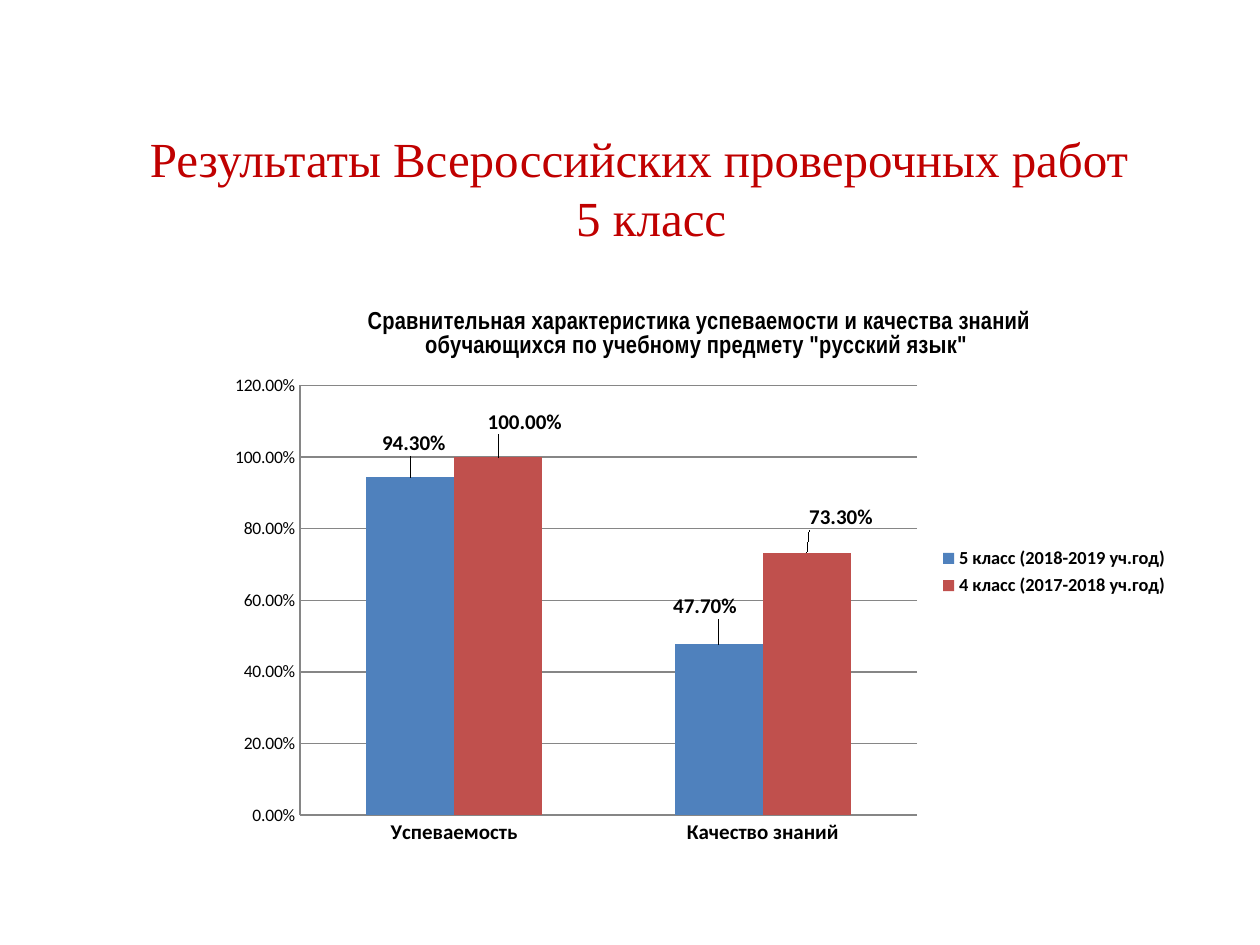
from lxml.etree import SubElement
from pptx import Presentation
from pptx.chart.data import CategoryChartData
from pptx.dml.color import RGBColor
from pptx.enum.chart import XL_CHART_TYPE, XL_LABEL_POSITION, XL_LEGEND_POSITION, XL_TICK_MARK
from pptx.enum.text import MSO_ANCHOR, PP_ALIGN
from pptx.oxml import parse_xml
from pptx.oxml.ns import nsdecls, qn
from pptx.util import Inches, Pt

DARK_RED = RGBColor(0xC0, 0x00, 0x00)
BLACK = RGBColor(0x00, 0x00, 0x00)
GRID_GRAY = RGBColor(0x86, 0x86, 0x86)
BLUE = RGBColor(0x4F, 0x81, 0xBD)
RED = RGBColor(0xC0, 0x50, 0x4D)

CHART_BOX = (1.72, 2.27, 7.66, 4.54)
PLOT_BOX = (0.66, 0.79, 4.9, 3.41)
CATEGORIES = ("Успеваемость", "Качество знаний")
# name, values, colour, label shifts in inches
GRADES = (
    ("5 класс (2018-2019 уч.год)", (0.943, 0.477), BLUE, ((0.03, -0.13), (-0.11, -0.16))),
    ("4 класс (2017-2018 уч.год)", (1, 0.733), RED, ((0.21, -0.14), (0.27, -0.14))),
)


def manual_layout(x, y, size=None):
    """Chart layout element from inches; with a size it places the inner plot area."""
    width, height = CHART_BOX[2:]
    layout = parse_xml(f"<c:layout {nsdecls('c')}><c:manualLayout/></c:layout>")
    settings = []
    if size:
        settings += [("layoutTarget", "inner"), ("xMode", "edge"), ("yMode", "edge")]
    settings += [("x", x / width), ("y", y / height)]
    if size:
        settings += [("w", size[0] / width), ("h", size[1] / height)]
    for tag, value in settings:
        SubElement(layout[0], qn(f"c:{tag}")).set("val", str(value))
    return layout


class SlideBuilder:
    def __init__(self, slide):
        self.slide = slide
        self.title_font = "Times New Roman"
        self.chart_font = "Calibri"
        self.chart_title_font = "Arial Narrow"
        self.percent = "0.00%"

    def style(self, font, size, name, bold=False, color=BLACK):
        font.size, font.name, font.bold = Pt(size), name, bold
        font.color.rgb = color

    def title(self, text, box):
        heading = self.slide.shapes.title
        heading.left, heading.top, heading.width, heading.height = map(Inches, box)
        frame = heading.text_frame
        frame.text = text
        frame.vertical_anchor = MSO_ANCHOR.MIDDLE
        paragraph = frame.paragraphs[0]
        paragraph.alignment = PP_ALIGN.CENTER
        for run in paragraph.runs:
            self.style(run.font, 28, self.title_font, color=DARK_RED)

    def column_chart(self, title):
        data = CategoryChartData(number_format=self.percent)
        data.categories = CATEGORIES
        for name, values, _, _ in GRADES:
            data.add_series(name, values)
        chart = self.slide.shapes.add_chart(
            XL_CHART_TYPE.COLUMN_CLUSTERED, *map(Inches, CHART_BOX), data).chart
        self.style(chart.font, 10, self.chart_font)
        chart.has_title = True
        chart.chart_title.include_in_layout = False
        heading = chart.chart_title.text_frame
        heading.text = title
        self.style(heading.paragraphs[0].runs[0].font, 14, self.chart_title_font, True)
        chart.has_legend = True
        chart.legend.position = XL_LEGEND_POSITION.RIGHT
        chart.legend.include_in_layout = False
        self.style(chart.legend.font, 10.5, self.chart_font, True)
        self.axes(chart)
        self.columns(chart.plots[0])
        plot_area = chart.plots[0]._element.getparent()
        for old in plot_area.findall(qn("c:layout")):
            plot_area.remove(old)
        plot_area.insert(0, manual_layout(*PLOT_BOX[:2], PLOT_BOX[2:]))

    def axes(self, chart):
        for axis in (chart.category_axis, chart.value_axis):
            axis.major_tick_mark = axis.minor_tick_mark = XL_TICK_MARK.NONE
            axis.format.line.color.rgb = GRID_GRAY
        self.style(chart.category_axis.tick_labels.font, 12, self.chart_font, True)
        values = chart.value_axis
        values.minimum_scale, values.maximum_scale, values.major_unit = 0, 1.2, 0.2
        values.has_major_gridlines = True
        values.major_gridlines.format.line.color.rgb = GRID_GRAY
        values.tick_labels.number_format = self.percent
        values.tick_labels.number_format_is_linked = False
        self.style(values.tick_labels.font, 10, self.chart_font)

    def columns(self, plot):
        plot.gap_width, plot.overlap = 150, 0
        plot.vary_by_categories = False
        for series, (_, _, color, shifts) in zip(plot.series, GRADES):
            series.format.fill.solid()
            series.format.fill.fore_color.rgb = color
            labels = series.data_labels
            labels.show_value = True
            labels.number_format = self.percent
            labels.number_format_is_linked = False
            self.style(labels.font, 12, self.chart_font, True)
            for index in range(len(shifts)):
                label = series.points[index].data_label
                self.style(label.font, 12, self.chart_font, True)
                label.position = XL_LABEL_POSITION.OUTSIDE_END
            for point_label, shift in zip(series._element.iter(qn("c:dLbl")), shifts):
                point_label.insert(1, manual_layout(*shift))


def main():
    deck = Presentation()
    deck.slide_width, deck.slide_height = Inches(10), Inches(7.5)
    builder = SlideBuilder(deck.slides.add_slide(deck.slide_layouts[5]))
    builder.title("Результаты Всероссийских проверочных работ \v 5 класс", (0.62, 0.86, 9, 1.25))
    builder.column_chart("Сравнительная характеристика успеваемости и качества знаний "
                         "обучающихся по учебному предмету \"русский язык\" ")
    deck.save("out.pptx")


if __name__ == "__main__":
    main()
